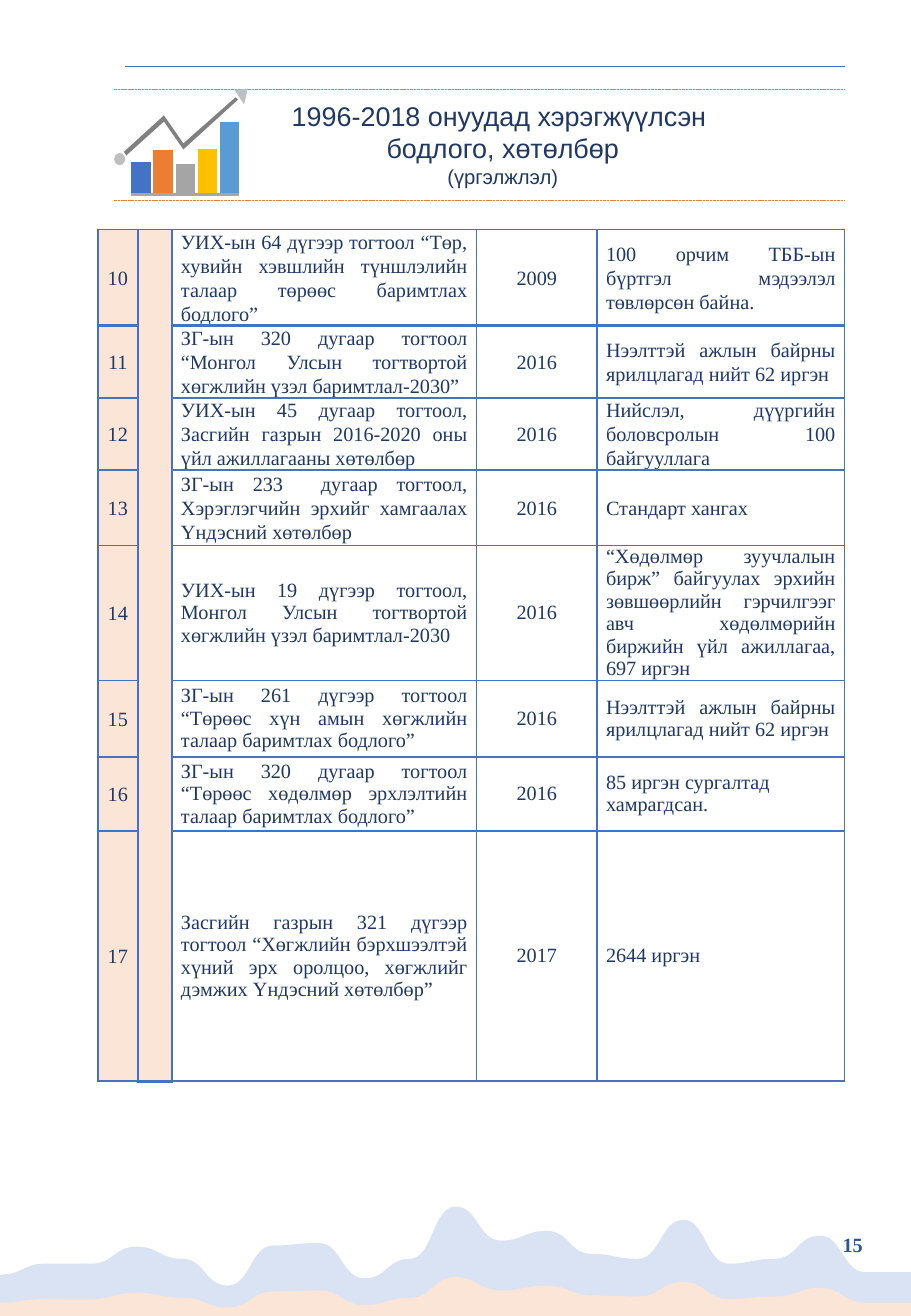
"""Build page 15: policies and programmes carried out in 1996-2018, continued."""
from lxml.etree import SubElement
from pptx import Presentation
from pptx.dml.color import RGBColor
from pptx.enum.dml import MSO_LINE
from pptx.enum.shapes import MSO_CONNECTOR, MSO_SHAPE
from pptx.enum.text import MSO_ANCHOR, PP_ALIGN
from pptx.oxml.ns import qn
from pptx.util import Inches, Pt

BLUE = RGBColor(0x44, 0x72, 0xC4)
ORANGE = RGBColor(0xED, 0x7D, 0x31)
GRAY = RGBColor(0xA5, 0xA5, 0xA5)
GOLD = RGBColor(0xFF, 0xC0, 0x00)
SKY = RGBColor(0x5B, 0x9B, 0xD5)
SILVER = RGBColor(0xBF, 0xBF, 0xBF)
STEEL = RGBColor(0x80, 0x80, 0x80)
BASE_GRAY = RGBColor(0xA6, 0xA6, 0xA6)
NAVY = RGBColor(0x20, 0x38, 0x64)
PAGE_BLUE = RGBColor(0x2F, 0x55, 0x97)
PALE_BLUE = RGBColor(0xDA, 0xE3, 0xF3)
PEACH = RGBColor(0xFB, 0xE5, 0xD6)
WHITE = RGBColor(0xFF, 0xFF, 0xFF)

COLUMNS, ROWS = 750, 1083
GRID = Inches(7.5) // COLUMNS

deck = Presentation()
deck.slide_width, deck.slide_height = GRID * COLUMNS, GRID * ROWS
page = deck.slides.add_slide(deck.slide_layouts[6])


def write(paragraph, text, size=12, font="Times New Roman", color=NAVY,
          align=PP_ALIGN.CENTER, bold=None, spacing=None, after=None):
    paragraph.alignment = align
    paragraph.line_spacing = spacing
    paragraph.space_after = after
    run = paragraph.add_run()
    run.text = text
    run.font.size, run.font.name, run.font.bold = Pt(size), font, bold
    run.font.color.rgb = color


def outline(points, color):
    corners = [(round(x * GRID), round(y * GRID)) for x, y in points]
    builder = page.shapes.build_freeform(*corners[0])
    builder.add_line_segments(corners[1:])
    area = builder.convert_to_shape()
    area.shadow.inherit = False
    area.fill.solid()
    area.fill.fore_color.rgb = color
    area.line.fill.background()
    return area


policies = [
    (63, "10", "УИХ-ын 64 дүгээр тогтоол “Төр, хувийн хэвшлийн түншлэлийн талаар төрөөс баримтлах бодлого”",
     "2009", "100 орчим ТББ-ын бүртгэл мэдээлэл төвлөрсөн байна."),
    (59, "11", "ЗГ-ын 320 дугаар тогтоол “Монгол Улсын тогтвортой хөгжлийн үзэл баримтлал-2030”",
     "2016", "Нээлттэй ажлын байрны ярилцлагад нийт 62 иргэн"),
    (57, "12", "УИХ-ын 45 дугаар тогтоол, Засгийн газрын 2016-2020 оны үйл ажиллагааны хөтөлбөр",
     "2016", "Нийслэл, дүүргийн боловсролын 100 байгууллага"),
    (62, "13", "ЗГ-ын 233  дугаар тогтоол, Хэрэглэгчийн эрхийг хамгаалах Үндэсний хөтөлбөр",
     "2016", "Стандарт хангах"),
    (80, "14", "УИХ-ын 19 дүгээр тогтоол, Монгол Улсын тогтвортой хөгжлийн үзэл баримтлал-2030",
     "2016", "“Хөдөлмөр зуучлалын бирж” байгуулах эрхийн зөвшөөрлийн гэрчилгээг авч "
     "хөдөлмөрийн биржийн үйл ажиллагаа, 697 иргэн"),
    (63, "15", "ЗГ-ын 261 дүгээр тогтоол “Төрөөс хүн амын хөгжлийн талаар баримтлах бодлого”",
     "2016", "Нээлттэй ажлын байрны ярилцлагад нийт 62 иргэн"),
    (61, "16", "ЗГ-ын 320 дугаар тогтоол “Төрөөс хөдөлмөр эрхлэлтийн талаар баримтлах бодлого”",
     "2016", "85 иргэн сургалтад хамрагдсан."),
    (206, "17", "Засгийн газрын 321 дүгээр тогтоол “Хөгжлийн бэрхшээлтэй хүний эрх оролцоо, "
     "хөгжлийг дэмжих Үндэсний хөтөлбөр”", "2017", "2644 иргэн"),
]
column_widths = [33, 28, 251, 99, 204]
policy_table = page.shapes.add_table(
    len(policies), len(column_widths), round(GRID * 80.5), GRID * 189,
    GRID * sum(column_widths), GRID * sum(policy[0] for policy in policies)).table
policy_table.first_row = policy_table.horz_banding = False
for column, width in zip(policy_table.columns, column_widths):
    column.width = GRID * width

for row, (height, number, decree, year, result) in enumerate(policies):
    policy_table.rows[row].height = GRID * height
    for column, text in enumerate([number, "", decree, year, result]):
        cell = policy_table.cell(row, column)
        cell.margin_left = cell.margin_right = round(GRID * 7.5)
        cell.margin_top = cell.margin_bottom = 0
        cell.vertical_anchor = MSO_ANCHOR.MIDDLE
        for side in "LRTB":
            heavy = (row, side) in [(0, "B"), (1, "T")]
            edge = SubElement(cell._tc.get_or_add_tcPr(), qn(f"a:ln{side}"), w=str(Pt(2 if heavy else 1)))
            SubElement(SubElement(edge, qn("a:solidFill")), qn("a:srgbClr"), val=str(BLUE))
        cell.fill.solid()
        cell.fill.fore_color.rgb = PEACH if column < 2 else WHITE
        if text:
            ragged = column == 4 and row > 5
            justified = PP_ALIGN.LEFT if ragged else PP_ALIGN.JUSTIFY
            airy = row < 4 or column == 0
            write(cell.text_frame.paragraphs[0], text,
                  align=justified if column in (2, 4) else PP_ALIGN.CENTER,
                  spacing=1.07 if airy else None, after=Pt(8) if airy else None)
policy_table.cell(0, 1).merge(policy_table.cell(len(policies) - 1, 1))

for left, top, color, dash in [(103, 55, BLUE, None), (94, 74, ORANGE, MSO_LINE.SQUARE_DOT),
                               (94, 165, ORANGE, MSO_LINE.SQUARE_DOT)]:
    rule = page.shapes.add_connector(MSO_CONNECTOR.STRAIGHT, GRID * left, GRID * top, GRID * 696, GRID * top)
    rule.line.color.rgb, rule.line.width = color, Pt(0.5)
    if dash:
        rule.line.dash_style = dash
    SubElement(rule._element.spPr, qn("a:effectLst"))

heading = page.shapes.add_textbox(GRID * 126, GRID * 77, GRID * 576, GRID * 84).text_frame
heading.word_wrap = True
write(heading.paragraphs[0], "1996-2018 онуудад хэрэгжүүлсэн ", size=16, font="Arial")
write(heading.add_paragraph(), "бодлого, хөтөлбөр", size=16, font="Arial")
write(heading.add_paragraph(), "(үргэлжлэл)", font="Arial")

growth_bars = [(25.5, BLUE), (35.5, ORANGE), (24, GRAY), (36, GOLD), (58.5, SKY)]
for place, (height, color) in enumerate(growth_bars):
    left, right = 108 + 18.3 * place, 124 + 18.3 * place
    outline([(left, 159 - height), (right, 159 - height), (right, 159), (left, 159)], color)
outline([(108, 159), (197, 159), (197, 161), (108, 161)], BASE_GRAY)
outline([(204, 73), (193, 74), (201, 86)], SILVER)
outline([(102, 125), (135, 95), (151, 118), (194, 80), (196, 82),
         (151, 123), (135, 100), (104, 128)], STEEL)
trend_start = page.shapes.add_shape(MSO_SHAPE.OVAL, GRID * 94, GRID * 126, GRID * 9, GRID * 10)
trend_start.shadow.inherit = False
trend_start.fill.solid()
trend_start.fill.fore_color.rgb = SILVER
trend_start.line.fill.background()

page_number = page.shapes.add_textbox(GRID * 677, GRID * 1009, GRID * 50, GRID * 30).text_frame
page_number.word_wrap = True
write(page_number.paragraphs[0], "15", color=PAGE_BLUE, bold=True)

waves = [
    (PALE_BLUE, [1049, 1040, 1040, 1026, 1036, 1058, 1025, 1023, 1052, 1036, 993,
                 1021, 1013, 1032, 1036, 1004, 1040, 1036, 1017, 1047, 1047]),
    (PEACH, [1072, 1069, 1069, 1064, 1068, 1076, 1063, 1062, 1074, 1068, 1051,
             1062, 1058, 1066, 1067, 1055, 1069, 1067, 1060, 1072, 1072]),
]
for color, crests in waves:
    stride = COLUMNS / (len(crests) - 1)
    shore = [(0, crests[0])]
    for place, (start, end) in enumerate(zip(crests, crests[1:])):
        middle = stride * (place + 0.5)
        shore += [(middle, start), (middle, end), (stride * (place + 1), end)]
    wave = outline(shore + [(COLUMNS, ROWS), (0, ROWS)], color)
    segments = list(wave._element.iter(qn("a:lnTo")))
    for first in range(0, len(shore) - 1, 3):
        bend = segments[first]
        bend.tag = qn("a:cubicBezTo")
        for segment in segments[first + 1:first + 3]:
            bend.append(segment[0])
            segment.getparent().remove(segment)

deck.save("out.pptx")
